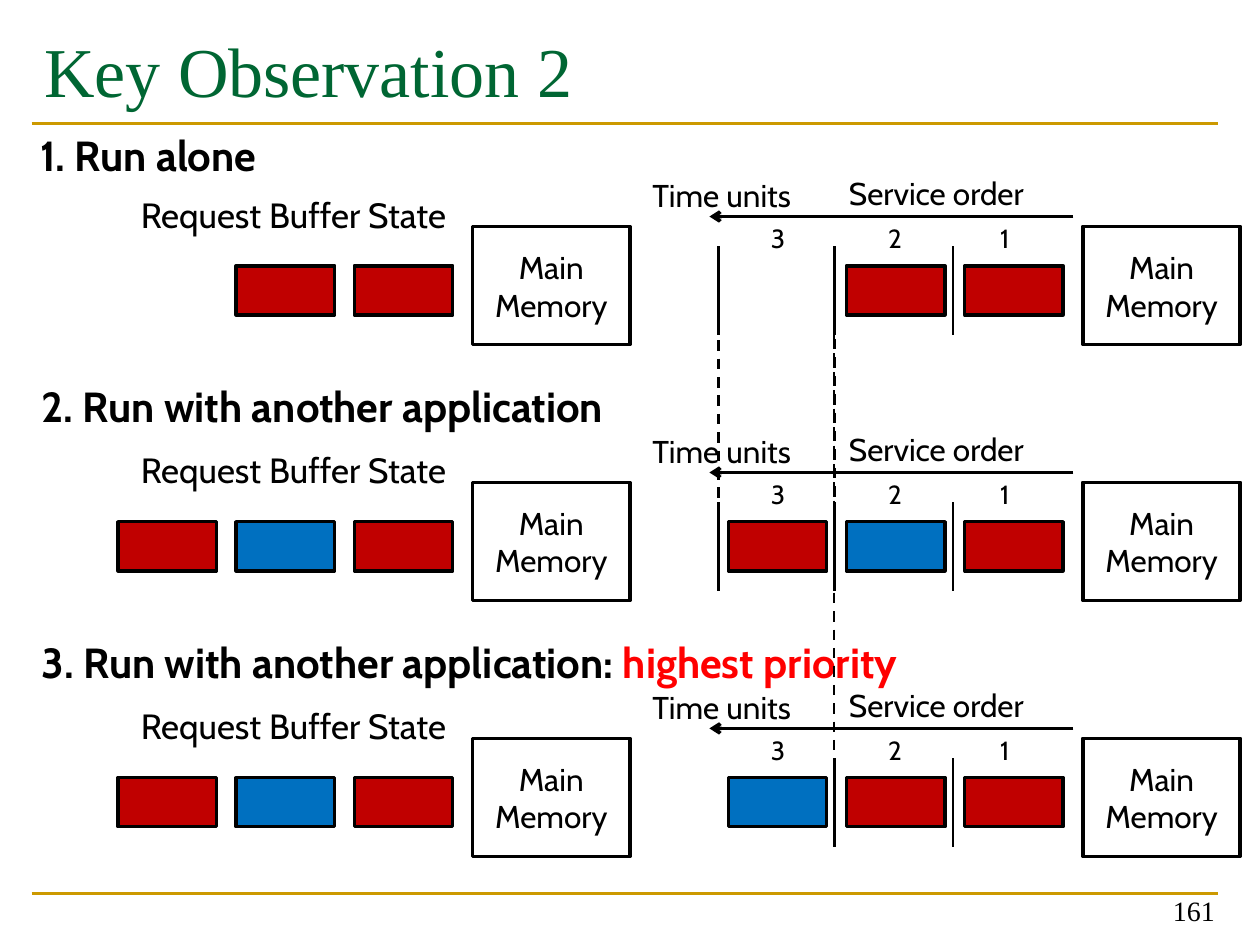
from dataclasses import dataclass
from typing import Optional

from lxml import etree
from pptx import Presentation
from pptx.dml.color import RGBColor
from pptx.enum import dml, shapes, text
from pptx.oxml.ns import qn
from pptx.util import Pt

HUES = {"black": "000000", "red": "C00000", "blue": "0070C0",
        "gold": "CC9900", "green": "006633", "alert": "FF0000"}
SANS, SERIF = "Cabin", "Times New Roman"
PITCH = 146.25            # between the three cases
STEP = 67.5               # between request slots
SLOT = (56.25, 28.1)
MEM = (90, 67.5)
BUFFER, SERVICE = 270, 618.75   # left edges of the memory boxes


@dataclass
class Label:
    words: str
    x: float
    y: float
    w: float
    h: float
    size: float
    bold: bool = False
    font: str = SANS


@dataclass
class Rule:
    x1: float
    y1: float
    x2: float
    y2: float
    width: float = 1.5
    hue: str = "black"
    dash: bool = False
    arrow: bool = False


@dataclass
class Case:
    head: Label
    buffer: list[str]     # nearest to memory first
    served: list[str]     # in order of service
    marks: int            # number of time dividers
    alert: str = ""


def shade(hue: str) -> RGBColor:
    return RGBColor.from_string(HUES[hue])


def style(run, size: float, hue: str = "black", bold: bool = False,
          font: str = SANS) -> None:
    run.font.size, run.font.bold, run.font.name = Pt(size), bold, font
    run.font.color.rgb = shade(hue)


def write(slide, item: Label):
    box = slide.shapes.add_textbox(Pt(item.x), Pt(item.y), Pt(item.w), Pt(item.h))
    frame = box.text_frame
    frame.word_wrap = True
    frame.text = item.words
    style(frame.paragraphs[0].runs[0], item.size, bold=item.bold, font=item.font)
    return frame


def block(slide, x: float, y: float, size: tuple[float, float],
          fill: Optional[str] = None):
    box = slide.shapes.add_shape(shapes.MSO_SHAPE.RECTANGLE,
                                 Pt(x), Pt(y), Pt(size[0]), Pt(size[1]))
    box.shadow.inherit = False
    if fill:
        box.fill.solid()
        box.fill.fore_color.rgb = shade(fill)
    else:
        box.fill.background()
    box.line.color.rgb = shade("black")
    box.line.width = Pt(2)
    return box


def draw(slide, rule: Rule) -> None:
    line = slide.shapes.add_connector(shapes.MSO_CONNECTOR.STRAIGHT, Pt(rule.x1),
                                      Pt(rule.y1), Pt(rule.x2), Pt(rule.y2))
    line.line.color.rgb = shade(rule.hue)
    line.line.width = Pt(rule.width)
    if rule.dash:
        line.line.dash_style = dml.MSO_LINE.DASH
    if rule.arrow:
        etree.SubElement(line.line._get_or_add_ln(), qn("a:tailEnd"), type="arrow")
    etree.SubElement(line._element.spPr, qn("a:effectLst"))


def memory(slide, x: float, y: float) -> None:
    frame = block(slide, x, y, MEM).text_frame
    frame.word_wrap = True
    frame.vertical_anchor = text.MSO_ANCHOR.MIDDLE
    frame.text = "Main Memory"
    para = frame.paragraphs[0]
    para.alignment = text.PP_ALIGN.CENTER
    style(para.runs[0], 18)


def queue(slide, edge: float, y: float, fills: list[str]) -> None:
    """Lay slots leftwards from a memory box."""
    for i, fill in enumerate(fills, 1):
        block(slide, edge - i * STEP, y, SLOT, fill)


def show(slide, case: Case, top: float) -> None:
    """Draw one case; top is the height of its service arrow."""
    frame = write(slide, case.head)
    if case.alert:
        run = frame.paragraphs[0].add_run()
        run.text = case.alert
        style(run, case.head.size, "alert", True)
    for item in (Label("Request Buffer State", 73.4, top - 17, 196.6, 31.5, 20),
                 Label("Time units", 365.75, top - 26.5, 140.4, 29, 18),
                 Label("Service order", 478, top - 28, 123.8, 29, 18)):
        write(slide, item)
    for i, x in enumerate((564.5, 500.4, 433.4), 1):
        write(slide, Label(str(i), x, top, 16.6, 25.4, 15))
    for edge, fills in ((BUFFER, case.buffer), (SERVICE, case.served)):
        memory(slide, edge, top + 5.65)
        queue(slide, edge, top + 28.1, fills)
    draw(slide, Rule(613.4, top, 405.4, top, 2, arrow=True))
    for x in (544.5, 477, 410.4)[:case.marks]:
        draw(slide, Rule(x, top + 17, x, top + 67.6))


def main() -> None:
    deck = Presentation()
    deck.slide_width, deck.slide_height = Pt(720), Pt(540)
    slide = deck.slides.add_slide(deck.slide_layouts[5])

    for y in (510.5, 70.6):
        draw(slide, Rule(18, y, 696.2, y, hue="gold"))
    title = slide.shapes.title
    title.left, title.top, title.width, title.height = Pt(18), Pt(12.2), Pt(678.2), Pt(84.2)
    frame = title.text_frame
    frame.text = "Key Observation 2"
    frame.auto_size = text.MSO_AUTO_SIZE.NONE
    frame.vertical_anchor = text.MSO_ANCHOR.TOP
    frame.paragraphs[0].alignment = text.PP_ALIGN.LEFT
    style(frame.paragraphs[0].runs[0], 40, "green", font=SERIF)

    page = write(slide, Label("161", 533.5, 497.5, 167.8, 36, 16, font=SERIF))
    page.vertical_anchor = text.MSO_ANCHOR.BOTTOM
    page.paragraphs[0].alignment = text.PP_ALIGN.RIGHT

    mixed = ["red", "blue", "red"]
    cases = [
        Case(Label("1. Run alone", 15.8, 70.6, 192, 36, 24, True),
             ["red"] * 2, ["red"] * 2, 3),
        Case(Label("2. Run with another application", 16.6, 213.8, 433.4, 36, 24, True),
             mixed, mixed, 3),
        Case(Label("3. Run with another application: ", 16.6, 360, 624, 36, 24, True),
             mixed, ["red", "red", "blue"], 2, "highest priority"),
    ]
    for i, case in enumerate(cases):
        show(slide, case, 123.75 + i * PITCH)

    for x, y1, y2 in ((477, 193.7, 294.5), (410.4, 194.4, 295.9), (476.6, 191.5, 450)):
        draw(slide, Rule(x, y1, x, y2, dash=True))
    deck.save("out.pptx")


if __name__ == "__main__":
    main()
